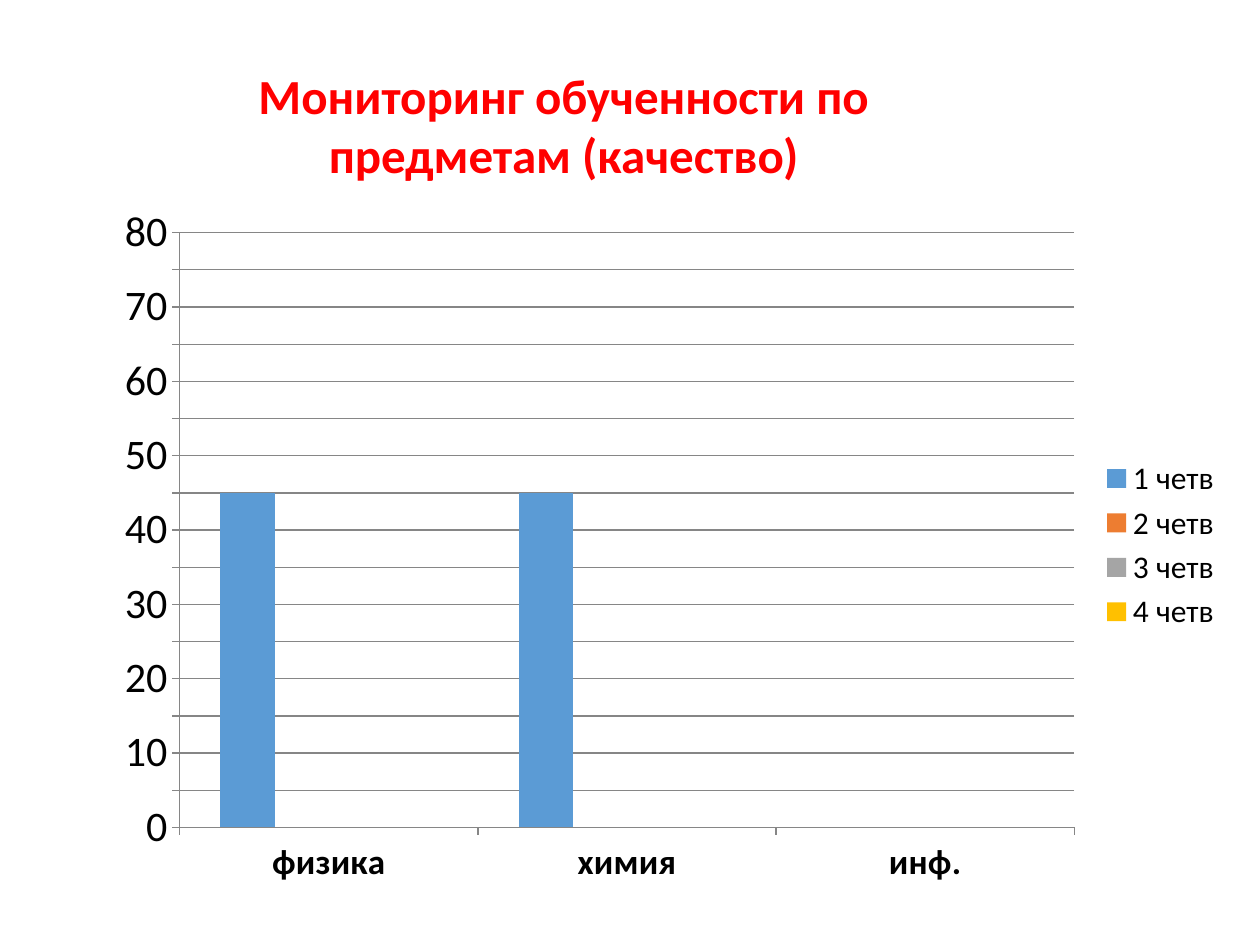
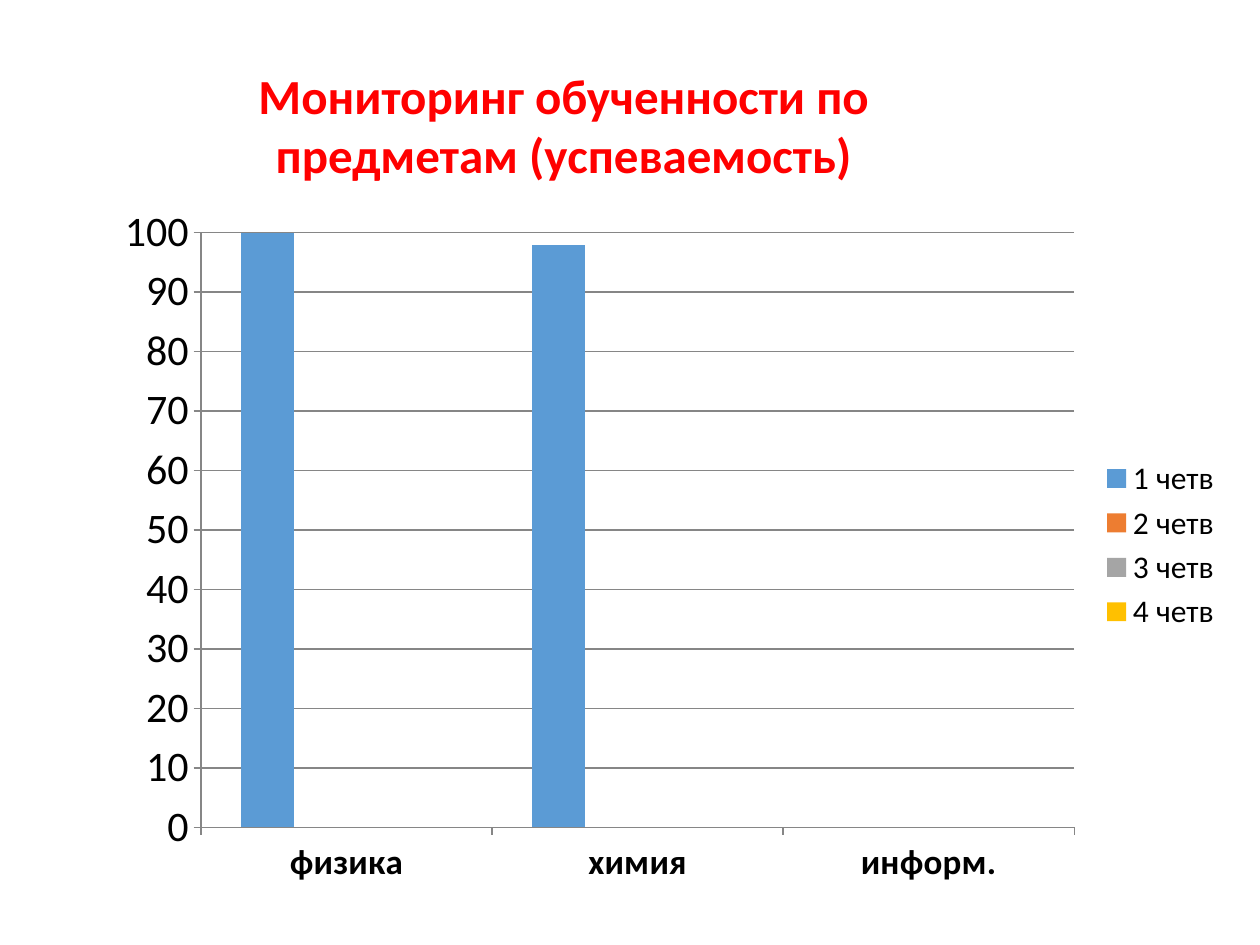
import dataclasses

import pptx
import pptx.chart.data
import pptx.dml.color
import pptx.enum.chart
import pptx.enum.text
import pptx.util
from pptx.util import Cm


@dataclasses.dataclass(frozen=True)
class Theme:
    font: str = "Calibri"
    title: str = "FF0000"
    ink: str = "000000"
    grid: str = "868686"
    bars: tuple = ("5B9BD5", "ED7D31", "A5A5A5", "FFC000")
    head: int = 28
    scale: int = 24
    group: int = 20
    key: int = 18


THEME = Theme()
TERMS = ("1 четв", "2 четв", "3 четв", "4 четв")


def tint(code):
    return pptx.dml.color.RGBColor.from_string(code)


def style(font, size, color=THEME.ink, bold=False):
    font.name = THEME.font
    font.size = pptx.util.Pt(size)
    font.bold = bold
    font.color.rgb = tint(color)


def rule(line):
    line.color.rgb = tint(THEME.grid)
    line.width = pptx.util.Pt(0.75)


def write(slide, text, left, top, width, height, **look):
    frame = slide.shapes.add_textbox(left, top, width, height).text_frame
    frame.word_wrap = True
    frame.auto_size = pptx.enum.text.MSO_AUTO_SIZE.SHAPE_TO_FIT_TEXT
    para = frame.paragraphs[0]
    para.alignment = pptx.enum.text.PP_ALIGN.CENTER
    run = para.add_run()
    run.text = text
    style(run.font, **look)


def set_axis(axis, size, bold=False):
    axis.major_tick_mark = pptx.enum.chart.XL_TICK_MARK.OUTSIDE
    axis.minor_tick_mark = pptx.enum.chart.XL_TICK_MARK.NONE
    rule(axis.format.line)
    style(axis.tick_labels.font, size, bold=bold)


def plot(slide, groups, marks, top, step):
    data = pptx.chart.data.CategoryChartData()
    data.categories = groups
    for term in TERMS:
        data.add_series(term, marks.get(term, [None] * len(groups)))
    chart = slide.shapes.add_chart(
        pptx.enum.chart.XL_CHART_TYPE.COLUMN_CLUSTERED,
        Cm(2.06), Cm(3.89), Cm(22.83), Cm(14.2), data).chart
    style(chart.font, THEME.key)
    chart.has_title = False
    chart.has_legend = True
    chart.legend.position = pptx.enum.chart.XL_LEGEND_POSITION.RIGHT
    chart.legend.include_in_layout = False
    style(chart.legend.font, THEME.key)

    set_axis(chart.category_axis, THEME.group, bold=True)
    scale = chart.value_axis
    set_axis(scale, THEME.scale)
    scale.minimum_scale, scale.maximum_scale = 0, top
    scale.major_unit = step
    scale.has_major_gridlines = True
    rule(scale.major_gridlines.format.line)

    bars = chart.plots[0]
    bars.gap_width = 150
    bars.vary_by_categories = False
    for term, color in zip(bars.series, THEME.bars):
        term.format.fill.solid()
        term.format.fill.fore_color.rgb = tint(color)
    bars.series[-1].data_labels.show_value = True


def add_page(deck, topic, groups, marks, top, step):
    slide = deck.slides.add_slide(deck.slide_layouts[6])
    plot(slide, groups, marks, top, step)
    write(slide, f"Мониторинг обученности по предметам ({topic})",
          Cm(2.51), Cm(1.19), Cm(17.7), Cm(2.64),
          size=THEME.head, color=THEME.title, bold=True)


def main():
    deck = pptx.Presentation()
    deck.slide_width, deck.slide_height = Cm(25.4), Cm(19.05)
    add_page(deck, "качество", ("физика", "химия", "инф."),
             {"1 четв": (45, 45, None)}, top=80, step=5)
    add_page(deck, "успеваемость", ("физика", "химия", "информ."),
             {"1 четв": (100, 98, None)}, top=100, step=10)
    deck.save("out.pptx")


if __name__ == "__main__":
    main()
